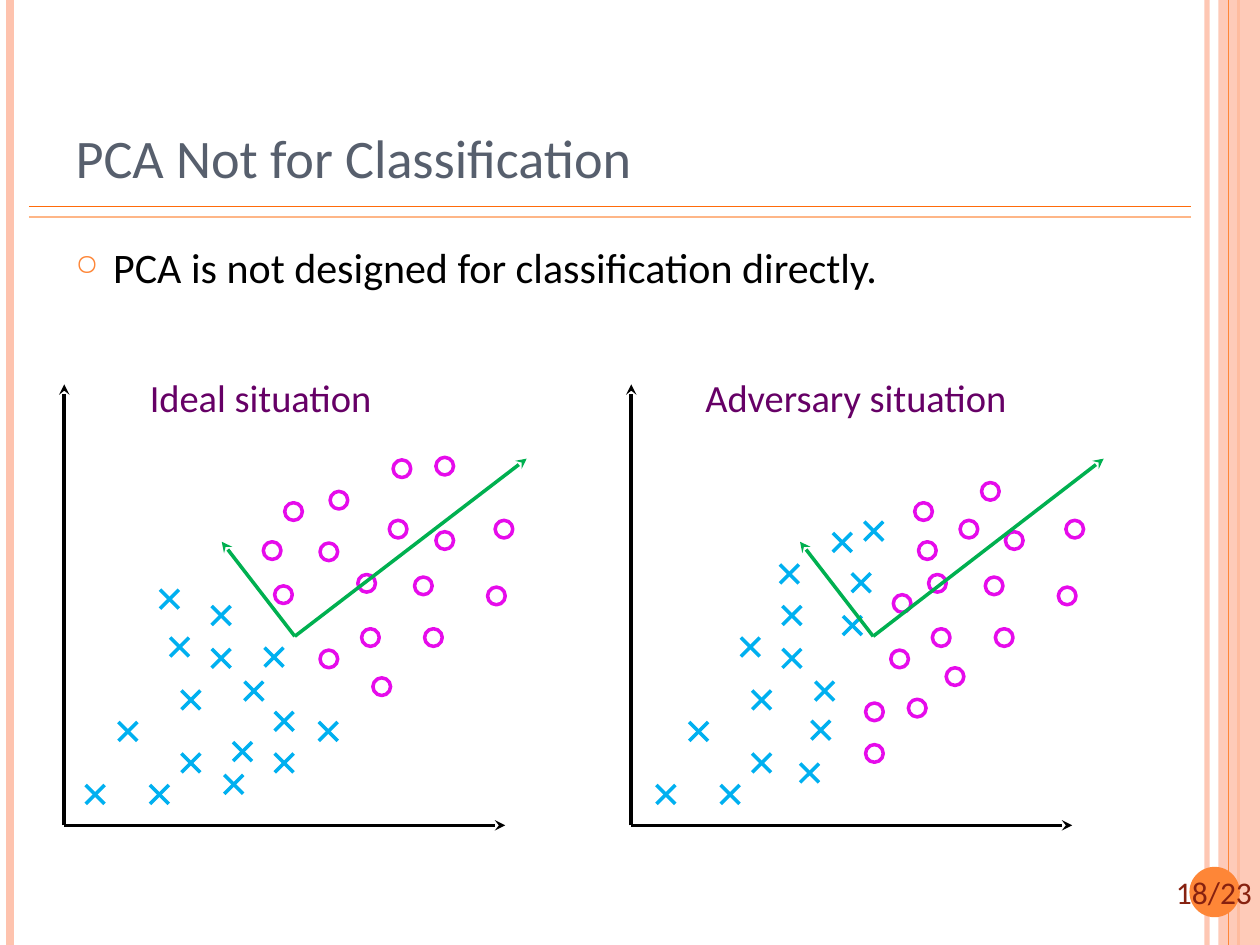
from pptx import Presentation
from pptx import util as u
from pptx.dml.color import RGBColor
from pptx.enum import shapes, text
from pptx.oxml import parse_xml
from pptx.oxml.ns import nsdecls, qn

TITLE = "PCA Not for Classification"
BULLET = "PCA is not designed for classification directly."
PAGE = "18/23"
PEACH, ORANGE, BLACK = "FEC3AE", "FE8637", "000000"
CYAN, PINK, GREEN, PURPLE = "00B0F0", "E60BEB", "00B050", "660066"
INCH, MARK, RING = 2.54, 0.15, 0.14

EDGES = [
    ((9.58, 0), (9.58, 7.5), PEACH, 3, 93),
    ((0.08, 0), (0.08, 7.5), PEACH, 4.5, 100),
    ((9.83, 0), (9.83, 7.5), ORANGE, 1.5, 100),
]
RULES = [
    ((9.75, 0), (9.75, 7.5), ORANGE, 0.75),
    ((0.23, 1.64), (9.45, 1.64), "FF6B0A", 1),
    ((0.23, 1.72), (9.45, 1.72), "FEB687", 1),
]
PLOTS = [
    dict(
        label="Ideal situation", box=(1.09, 2.92, 1.98, 0.47), left=0.51,
        origin=(2.34, 5.05), tips=[(4.18, 3.64), (1.76, 4.3)],
        crosses=[
            (0.94, 5.73), (1.94, 5.41), (2.18, 5.98), (1.78, 6.15), (1.68, 5.15),
            (0.68, 6.23), (1.19, 6.23), (2.18, 5.65), (2.53, 5.73), (1.35, 5.06),
            (1.68, 4.81), (1.85, 5.89), (2.1, 5.14), (1.27, 4.68), (1.44, 5.98),
            (1.44, 5.48),
        ],
        rings=[
            (3.93, 4.13), (2.96, 5.38), (3.37, 4.99), (2.87, 4.99), (2.18, 4.65),
            (3.87, 4.66), (3.46, 4.22), (2.26, 3.99), (3.12, 3.65), (2.54, 5.16),
            (2.54, 4.31), (3.46, 3.63), (2.09, 4.3), (3.29, 4.58), (2.62, 3.9),
            (2.84, 4.56), (3.09, 4.13),
        ],
    ),
    dict(
        label="Adversary situation", box=(5.5, 2.92, 2.7, 0.47), left=5.01,
        origin=(6.93, 5.05), tips=[(8.76, 3.64), (6.35, 4.3)],
        crosses=[
            (5.47, 5.73), (6.47, 5.41), (6.76, 4.55), (6.44, 5.72), (6.21, 5.15),
            (5.21, 6.23), (5.72, 6.23), (6.61, 4.23), (6.86, 4.14), (5.88, 5.06),
            (6.21, 4.81), (6.69, 4.89), (6.35, 6.06), (6.19, 4.48), (5.97, 5.98),
            (5.97, 5.48),
        ],
        rings=[
            (8.46, 4.13), (6.87, 5.58), (7.9, 4.99), (7.4, 4.99), (7.21, 5.55),
            (8.4, 4.66), (7.98, 4.22), (7.26, 3.99), (7.79, 3.83), (7.07, 5.16),
            (7.29, 4.3), (6.87, 5.91), (7.09, 4.72), (7.82, 4.58), (7.51, 5.3),
            (7.37, 4.56), (7.62, 4.13),
        ],
    ),
]


def cm(*inches):
    return [u.Cm(v * INCH) for v in inches]


def rgb(value):
    return RGBColor.from_string(value)


def fade(part, percent):
    clr = part.find(".//" + qn("a:srgbClr"))
    clr.append(parse_xml(f'<a:alpha {nsdecls("a")} val="{percent * 1000}"/>'))


def line(s, start, end, color, width=2, alpha=100, arrow=False):
    sp = s.shapes.add_connector(shapes.MSO_CONNECTOR.STRAIGHT, *cm(*start, *end))
    sp.line.color.rgb, sp.line.width = rgb(color), u.Pt(width)
    ln = sp.line._get_or_add_ln()
    if alpha < 100:
        fade(ln, alpha)
    if arrow:
        ln.append(parse_xml(f'<a:tailEnd {nsdecls("a")} type="stealth"/>'))
    sp._element.spPr.append(parse_xml(f'<a:effectLst {nsdecls("a")}/>'))


def shape(s, kind, box, fill=None, outline=None):
    sp = s.shapes.add_shape(kind, *cm(*box))
    sp.shadow.inherit = False
    if fill:
        sp.fill.solid()
        sp.fill.fore_color.rgb = rgb(fill)
    else:
        sp.fill.background()
    if outline:
        sp.line.color.rgb, sp.line.width = rgb(outline), u.Pt(2)
    else:
        sp.line.fill.background()
    return sp


def write(sp, words, size, color, align=text.PP_ALIGN.LEFT, **frame):
    tf = sp.text_frame
    for name, value in dict(auto_size=text.MSO_AUTO_SIZE.NONE, **frame).items():
        setattr(tf, name, value)
    p = tf.paragraphs[0]
    p.alignment = align
    r = p.add_run()
    r.text = words
    r.font.color.rgb = rgb(color)
    for name, value in dict(name="Calibri", size=u.Pt(size)).items():
        setattr(r.font, name, value)
    return p


def bullet(p):
    pPr = p._p.get_or_add_pPr()
    indent = u.Cm(0.3 * INCH)
    pPr.set("marL", str(indent))
    pPr.set("indent", str(-indent))
    for xml in (
        f'<a:buClr {nsdecls("a")}><a:srgbClr val="{ORANGE}"/></a:buClr>',
        f'<a:buSzPct {nsdecls("a")} val="70000"/>',
        f'<a:buChar {nsdecls("a")} char="○"/>',
    ):
        pPr.append(parse_xml(xml))


def plot(s, label, box, left, origin, tips, crosses, rings):
    corner = (left, 6.55)
    for end in ((left + 3.5, 6.55), (left, 3.05)):
        line(s, corner, end, BLACK, arrow=True)
    for x, y in crosses:
        line(s, (x, y), (x + MARK, y + MARK), CYAN)
        line(s, (x + MARK, y), (x, y + MARK), CYAN)
    for x, y in rings:
        shape(s, shapes.MSO_SHAPE.OVAL, (x, y, RING, RING), outline=PINK)
    for tip in tips:
        line(s, origin, tip, GREEN, arrow=True)
    write(s.shapes.add_textbox(*cm(*box)), label, 22, PURPLE, word_wrap=False)


def main():
    prs = Presentation()
    prs.slide_width, prs.slide_height = cm(10, 7.5)
    s = prs.slides.add_slide(prs.slide_layouts[5])

    for edge in EDGES:
        line(s, *edge)
    band = shape(s, shapes.MSO_SHAPE.RECTANGLE, (9.67, 0, 0.33, 7.5), PEACH)
    fade(band._element.spPr, 87)
    for rule in RULES:
        line(s, *rule)
    shape(s, shapes.MSO_SHAPE.OVAL, (9.44, 6.88, 0.4, 0.4), ORANGE)
    write(s.shapes.add_textbox(*cm(9.18, 6.88, 0.91, 0.4)), PAGE, 18, "862110",
          text.PP_ALIGN.CENTER, word_wrap=True, vertical_anchor=text.MSO_ANCHOR.MIDDLE)

    title = s.shapes.title
    title.left, title.top, title.width, title.height = cm(0.5, 0.3, 8.17, 1.25)
    write(title, TITLE, 31, "575F6D", vertical_anchor=text.MSO_ANCHOR.BOTTOM)
    body = s.shapes.add_textbox(*cm(0.5, 1.87, 8.17, 0.6))
    bullet(write(body, BULLET, 24, BLACK, word_wrap=True))

    for item in PLOTS:
        plot(s, **item)
    prs.save("out.pptx")


if __name__ == "__main__":
    main()
